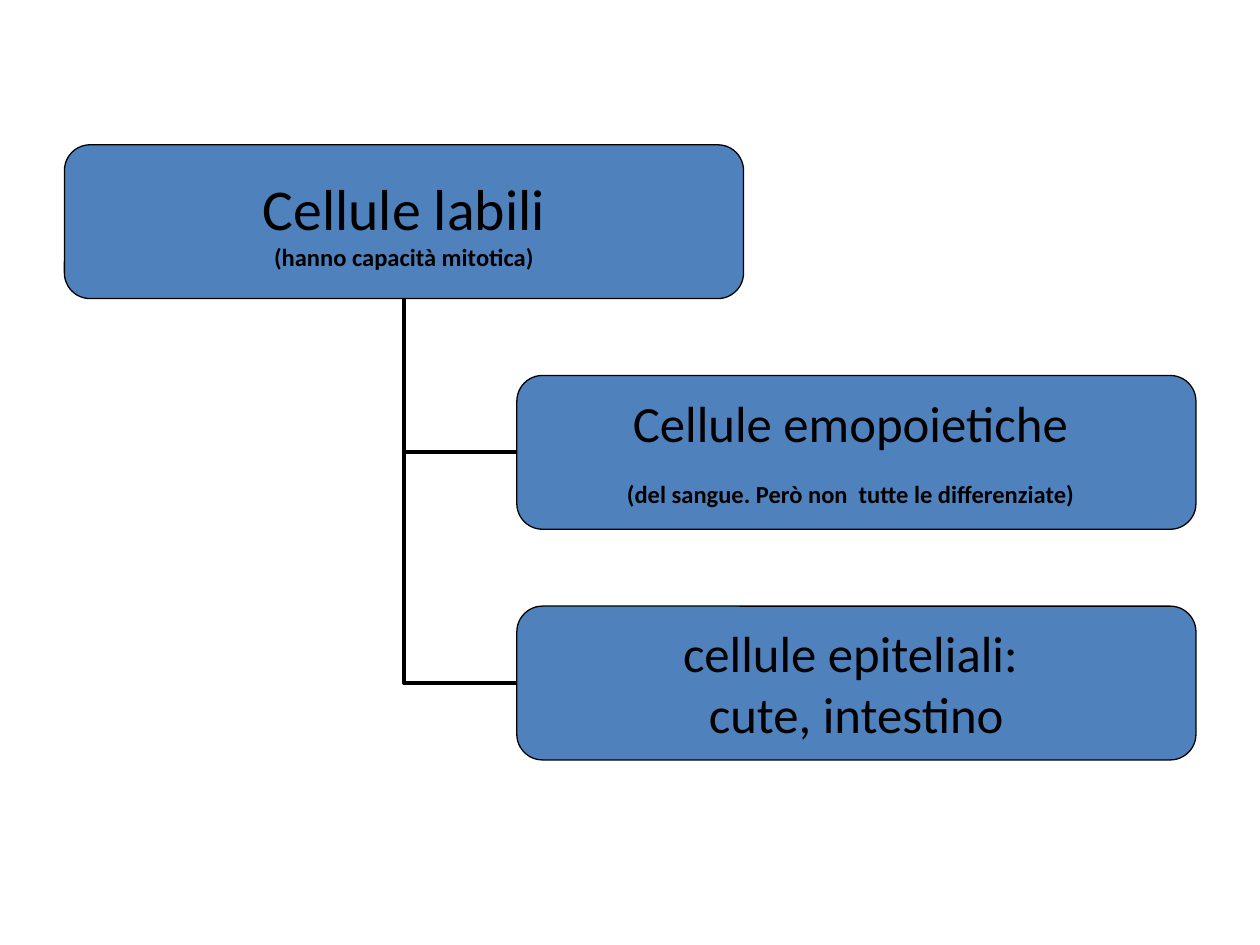
from lxml.etree import SubElement
from pptx import Presentation
from pptx.dml.color import RGBColor as RGB
from pptx.enum.shapes import MSO_CONNECTOR as CONN, MSO_SHAPE as SHAPE
from pptx.enum.text import MSO_ANCHOR as ANCHOR, PP_ALIGN as ALIGN
from pptx.oxml.ns import qn
from pptx.util import Cm, Pt

COLORS = {"box": "4F81BD", "ink": "000000"}
BOX_W, BOX_H = 13.69, 3.1
INDENT = 9.12
PITCH = BOX_H * 1.5
FRAME = dict(margin_left=0, margin_right=0, margin_top=0, margin_bottom=0,
             word_wrap=False, vertical_anchor=ANCHOR.MIDDLE)
BIG = dict(size=Pt(33), bold=False)
MEDIUM = dict(size=Pt(29), bold=False)
NOTE = dict(size=Pt(14), bold=True)

# Each box is a list of paragraphs, each paragraph a list of (text, format) runs.
PARENT = [[("Cellule labili", BIG)], [("(hanno capacità mitotica)", NOTE)]]
CHILDREN = [
    [[("Cellule emopoietiche ", MEDIUM)],
     [("(del sangue. Però non  tutte le differenziate)", NOTE), (" ", MEDIUM)]],
    [[("cellule epiteliali: ", MEDIUM)], [("cute, intestino", MEDIUM)]],
]


def set_all(obj, values):
    for name, value in values.items():
        setattr(obj, name, value)


def set_line(shape, width):
    shape.line.color.rgb = RGB.from_string(COLORS["ink"])
    shape.line.width = Pt(width)


def add_box(s, x, y, paragraphs):
    sp = s.shapes.add_shape(SHAPE.ROUNDED_RECTANGLE, Cm(x), Cm(y), Cm(BOX_W), Cm(BOX_H))
    sp.shadow.inherit = False
    sp.fill.solid()
    sp.fill.fore_color.rgb = RGB.from_string(COLORS["box"])
    set_line(sp, 0.75)
    tf = sp.text_frame
    set_all(tf, FRAME)
    for i, runs in enumerate(paragraphs):
        p = tf.add_paragraph() if i else tf.paragraphs[0]
        p.alignment = ALIGN.CENTER
        for text, values in runs:
            r = p.add_run()
            r.text = text
            r.font.name = "Calibri"
            r.font.color.rgb = RGB.from_string(COLORS["ink"])
            set_all(r.font, values)
    return sp


def add_branch(s, child, parent):
    """Join the child's left side to the parent's bottom with one bend, behind the boxes."""
    c = s.shapes.add_connector(CONN.ELBOW, 0, 0, 0, 0)
    c.begin_connect(child, 1)
    c.end_connect(parent, 2)
    set_line(c, 2.25)
    props = c._element.spPr
    props.find(qn("a:prstGeom")).set("prst", "bentConnector2")
    SubElement(props, qn("a:effectLst"))
    s.shapes._spTree.insert(2, c._element)


def add_hierarchy(s, x, y):
    parent = add_box(s, x, y, PARENT)
    for i, paragraphs in enumerate(CHILDREN, 1):
        child = add_box(s, x + INDENT, y + i * PITCH, paragraphs)
        add_branch(s, child, parent)


def main():
    prs = Presentation()
    prs.slide_width, prs.slide_height = Cm(25.4), Cm(19.05)
    s = prs.slides.add_slide(prs.slide_layouts[6])
    add_hierarchy(s, 1.3, 2.92)
    prs.save("out.pptx")


if __name__ == "__main__":
    main()
